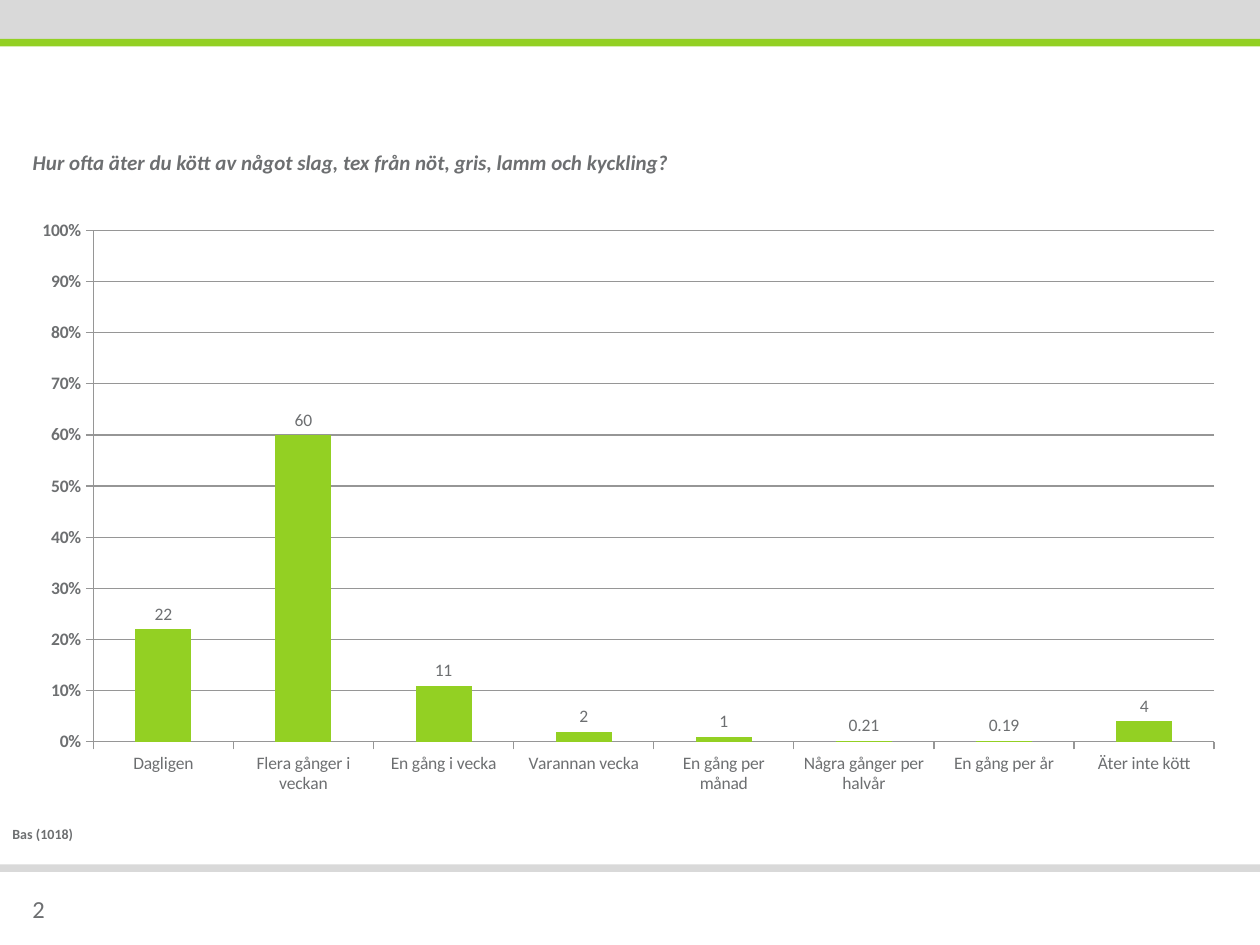
from dataclasses import dataclass

from lxml import etree
from pptx import Presentation
from pptx.chart.data import CategoryChartData
from pptx.dml.color import RGBColor
from pptx.enum.chart import XL_CHART_TYPE, XL_LABEL_POSITION, XL_TICK_MARK
from pptx.enum.shapes import MSO_SHAPE
from pptx.enum.text import MSO_ANCHOR, MSO_AUTO_SIZE, PP_ALIGN
from pptx.oxml.ns import qn
from pptx.util import Inches, Pt

COLUMN_CLUSTERED = XL_CHART_TYPE.COLUMN_CLUSTERED
OUTSIDE_END = XL_LABEL_POSITION.OUTSIDE_END
TICK_OUTSIDE = XL_TICK_MARK.OUTSIDE
TICK_NONE = XL_TICK_MARK.NONE
RECTANGLE = MSO_SHAPE.RECTANGLE
TOP, MIDDLE = MSO_ANCHOR.TOP, MSO_ANCHOR.MIDDLE
NO_AUTO_SIZE = MSO_AUTO_SIZE.NONE
LEFT = PP_ALIGN.LEFT

FONT = "Calibri"
TEXT_COLOR = "6D6F71"
GRAY = "D9D9D9"
GREEN = "93D023"
AXIS_COLOR = "969696"
SLIDE_WIDTH, SLIDE_HEIGHT = 10, 7.5
MARGIN = 0.16


@dataclass
class Band:
    top: float
    height: float
    color: str


@dataclass
class Label:
    text: str
    left: float
    top: float
    width: float
    height: float
    size: float
    bold: bool = False
    italic: bool = False
    anchor: MSO_ANCHOR = TOP


BANDS = [
    Band(0, 0.31, GRAY),
    Band(6.86, 0.06, GRAY),
    Band(0.31, 0.06, GREEN),
]
QUESTION = Label(
    "Hur ofta äter du kött av något slag, tex från nöt, gris, lamm och kyckling?",
    MARGIN, 1.14, 9.69, 0.57, 12, bold=True, italic=True,
)
LABELS = [
    Label("2", MARGIN, 6.95, 0.77, 0.52, 14, anchor=MIDDLE),
    Label("Bas (1018)", 0, 6.5, 10, 0.24, 8, bold=True),
]
ANSWERS = {
    "Dagligen": 22,
    "Flera gånger i veckan": 60,
    "En gång i vecka": 11,
    "Varannan vecka": 2,
    "En gång per månad": 1,
    "Några gånger per halvår": 0.21,
    "En gång per år": 0.19,
    "Äter inte kött": 4,
}
PLOT_LAYOUT = {"x": 0.06, "y": 0.04, "w": 0.92, "h": 0.86}


def rgb(color: str) -> RGBColor:
    return RGBColor.from_string(color)


def format_font(font, size: float, bold: bool = False, italic: bool = False) -> None:
    font.name = FONT
    font.size = Pt(size)
    font.bold = bold
    font.italic = italic
    font.color.rgb = rgb(TEXT_COLOR)


def format_line(line) -> None:
    line.color.rgb = rgb(AXIS_COLOR)
    line.width = Pt(0.75)


def draw_band(slide, band: Band) -> None:
    shape = slide.shapes.add_shape(
        RECTANGLE, 0, Inches(band.top), Inches(SLIDE_WIDTH), Inches(band.height)
    )
    shape.shadow.inherit = False
    shape.fill.solid()
    shape.fill.fore_color.rgb = rgb(band.color)
    shape.line.fill.background()


def write_label(shape, label: Label) -> None:
    shape.left, shape.top = Inches(label.left), Inches(label.top)
    shape.width, shape.height = Inches(label.width), Inches(label.height)
    text_frame = shape.text_frame
    text_frame.word_wrap = True
    text_frame.auto_size = NO_AUTO_SIZE
    text_frame.vertical_anchor = label.anchor
    paragraph = text_frame.paragraphs[0]
    paragraph.alignment = LEFT
    run = paragraph.add_run()
    run.text = label.text
    format_font(run.font, label.size, label.bold, label.italic)


def set_plot_layout(chart) -> None:
    plot_area = chart.element.chart.plotArea
    for existing in plot_area.findall(qn("c:layout")):
        plot_area.remove(existing)
    layout = etree.Element(qn("c:layout"))
    manual = etree.SubElement(layout, qn("c:manualLayout"))
    settings = {"layoutTarget": "inner", "xMode": "edge", "yMode": "edge", **PLOT_LAYOUT}
    for name, value in settings.items():
        etree.SubElement(manual, qn(f"c:{name}")).set("val", str(value))
    plot_area.insert(0, layout)


def format_axis(axis, bold: bool) -> None:
    axis.major_tick_mark = TICK_OUTSIDE
    axis.minor_tick_mark = TICK_NONE
    format_line(axis.format.line)
    format_font(axis.tick_labels.font, 10, bold)


def draw_chart(slide) -> None:
    data = CategoryChartData()
    data.categories = list(ANSWERS)
    data.add_series("Series 1", list(ANSWERS.values()))
    chart = slide.shapes.add_chart(
        COLUMN_CLUSTERED, Inches(MARGIN), Inches(1.64), Inches(9.67), Inches(4.72), data
    ).chart
    chart.has_title = False
    chart.has_legend = False
    format_font(chart.font, 18)
    set_plot_layout(chart)

    format_axis(chart.category_axis, bold=False)
    value_axis = chart.value_axis
    format_axis(value_axis, bold=True)
    value_axis.minimum_scale = 0
    value_axis.maximum_scale = 100
    value_axis.major_unit = 10
    value_axis.has_major_gridlines = True
    format_line(value_axis.major_gridlines.format.line)
    value_axis.tick_labels.number_format = '0"%"'
    value_axis.tick_labels.number_format_is_linked = False

    plot = chart.plots[0]
    plot.gap_width = 150
    plot.vary_by_categories = False
    series = plot.series[0]
    series.format.fill.solid()
    series.format.fill.fore_color.rgb = rgb(GREEN)
    data_labels = series.data_labels
    data_labels.show_value = True
    data_labels.position = OUTSIDE_END
    data_labels.number_format = "General"
    data_labels.number_format_is_linked = False
    format_font(data_labels.font, 10)


def main() -> None:
    presentation = Presentation()
    presentation.slide_width = Inches(SLIDE_WIDTH)
    presentation.slide_height = Inches(SLIDE_HEIGHT)
    slide = presentation.slides.add_slide(presentation.slide_layouts[5])
    for band in BANDS:
        draw_band(slide, band)
    draw_chart(slide)
    write_label(slide.shapes.title, QUESTION)
    for label in LABELS:
        write_label(slide.shapes.add_textbox(0, 0, 0, 0), label)
    presentation.save("out.pptx")


if __name__ == "__main__":
    main()
